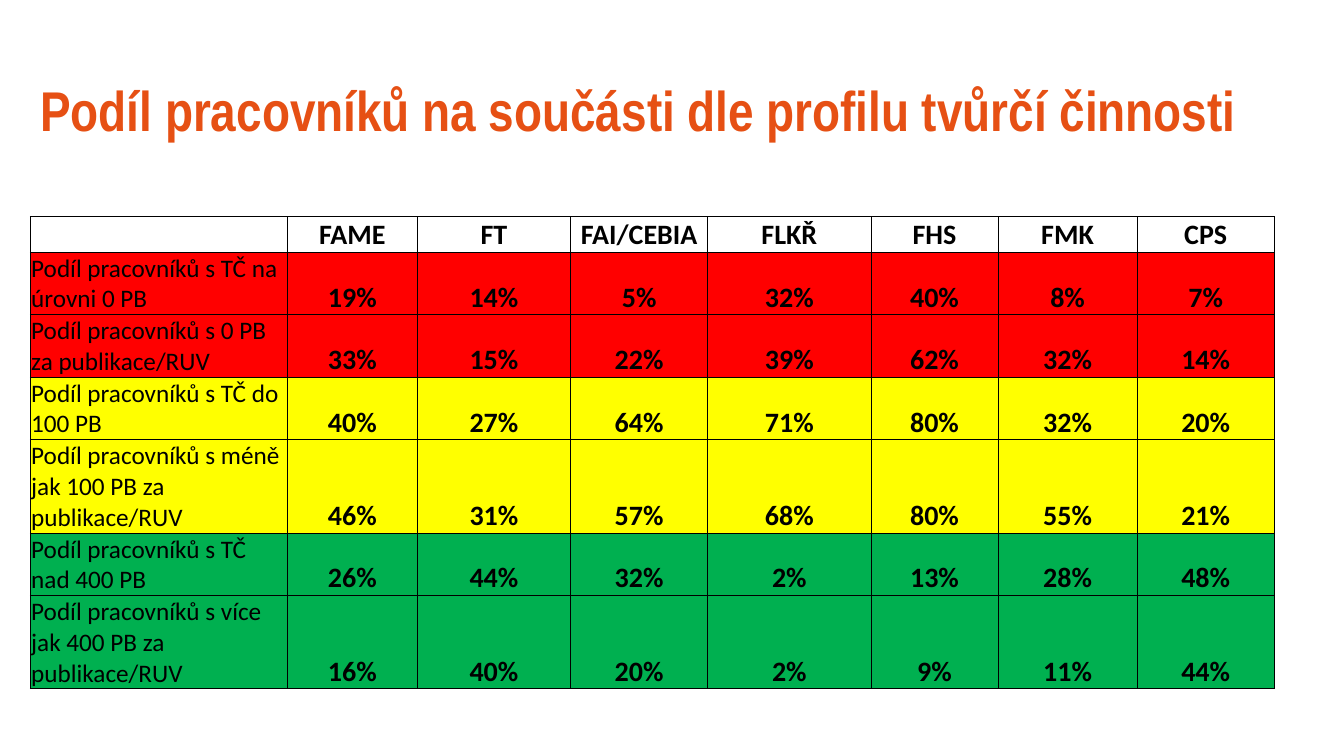
from lxml.etree import SubElement
from pptx import Presentation
from pptx.dml.color import RGBColor
from pptx.enum.text import MSO_ANCHOR as Anchor, MSO_AUTO_SIZE as AutoSize, PP_ALIGN as Align
from pptx.oxml.ns import qn
from pptx.util import Inches, Pt

ORANGE = RGBColor(0xE6, 0x50, 0x14)
BLACK = RGBColor(0x00, 0x00, 0x00)
RED = RGBColor(0xFF, 0x00, 0x00)
YELLOW = RGBColor(0xFF, 0xFF, 0x00)
GREEN = RGBColor(0x00, 0xB0, 0x50)

TITLE = "Podíl pracovníků na součásti dle profilu tvůrčí činnosti"
FACULTIES = ["FAME", "FT", "FAI/CEBIA", "FLKŘ", "FHS", "FMK", "CPS"]
COLUMN_WIDTHS = [2.55, 1.29, 1.52, 1.36, 1.62, 1.26, 1.38, 1.36]
HEADER_HEIGHT, TWO_LINES, THREE_LINES = 0.35, 0.62, 0.92

# Label, row height, fill, percentages by faculty
SHARES = [
    ("Podíl pracovníků s TČ na úrovni 0 PB", TWO_LINES, RED,
     [19, 14, 5, 32, 40, 8, 7]),
    ("Podíl pracovníků s 0 PB za publikace/RUV", TWO_LINES, RED,
     [33, 15, 22, 39, 62, 32, 14]),
    ("Podíl pracovníků s TČ do 100 PB", TWO_LINES, YELLOW,
     [40, 27, 64, 71, 80, 32, 20]),
    ("Podíl pracovníků s méně jak 100 PB za publikace/RUV", THREE_LINES, YELLOW,
     [46, 31, 57, 68, 80, 55, 21]),
    ("Podíl pracovníků s TČ nad 400 PB", TWO_LINES, GREEN,
     [26, 44, 32, 2, 13, 28, 48]),
    ("Podíl pracovníků s více jak 400 PB za publikace/RUV", THREE_LINES, GREEN,
     [16, 40, 20, 2, 9, 11, 44]),
]


def write_text(frame, text, *, font, size, color=BLACK, bold=False,
               align=Align.LEFT, line_spacing=None):
    paragraph = frame.paragraphs[0]
    paragraph.alignment = align
    paragraph.line_spacing = line_spacing
    if not text:
        return
    run = paragraph.add_run()
    run.text = text
    run.font.name = font
    run.font.size = Pt(size)
    run.font.bold = bold
    run.font.color.rgb = color


class SlideBuilder:
    title_font = "Arial Narrow"
    table_font = "Calibri"
    border_width = 0.5

    def __init__(self, deck):
        self.slide = deck.slides.add_slide(deck.slide_layouts[5])

    def title(self, text, left, top, width, height):
        heading = self.slide.shapes.title
        heading.left, heading.top = Inches(left), Inches(top)
        heading.width, heading.height = Inches(width), Inches(height)
        frame = heading.text_frame
        frame.word_wrap = True
        frame.auto_size = AutoSize.NONE
        frame.vertical_anchor = Anchor.MIDDLE
        write_text(frame, text, font=self.title_font, size=40, color=ORANGE,
                   bold=True, line_spacing=0.9)

    def table(self, rows, left, top, widths, heights):
        """Each row is a fill colour (or None) and its cell texts."""
        grid = self.slide.shapes.add_table(
            len(rows), len(widths), Inches(left), Inches(top),
            Inches(sum(widths)), Inches(sum(heights))).table
        grid.horz_banding = False
        grid.first_row = False
        for column, width in zip(grid.columns, widths):
            column.width = Inches(width)
        for row, height, (fill, texts) in zip(grid.rows, heights, rows):
            row.height = Inches(height)
            for index, (cell, text) in enumerate(zip(row.cells, texts)):
                self.cell(cell, text, fill, is_label=index == 0)

    def cell(self, cell, text, fill, is_label):
        cell.margin_left = cell.margin_right = cell.margin_top = Inches(0.01)
        cell.margin_bottom = 0
        cell.vertical_anchor = Anchor.BOTTOM
        self.borders(cell)
        if fill is None:
            cell.fill.background()
        else:
            cell.fill.solid()
            cell.fill.fore_color.rgb = fill
        write_text(cell.text_frame, text, font=self.table_font,
                   size=18 if is_label else 20, bold=not is_label,
                   align=Align.LEFT if is_label else Align.CENTER)

    def borders(self, cell):
        properties = cell._tc.get_or_add_tcPr()
        for side in ("a:lnL", "a:lnR", "a:lnT", "a:lnB"):
            line = SubElement(properties, qn(side), w=str(Pt(self.border_width)))
            solid = SubElement(line, qn("a:solidFill"))
            SubElement(solid, qn("a:srgbClr"), val=str(BLACK))


def main():
    deck = Presentation()
    deck.slide_width, deck.slide_height = Inches(13.33), Inches(7.5)
    builder = SlideBuilder(deck)

    # Heading
    builder.title(TITLE, 0.3, 0.4, 12.12, 1.45)

    # Shares by faculty
    rows = [(None, ["", *FACULTIES])]
    rows += [(fill, [label, *(f"{share}%" for share in shares)])
             for label, _, fill, shares in SHARES]
    heights = [HEADER_HEIGHT, *(height for _, height, _, _ in SHARES)]
    builder.table(rows, 0.3, 2.15, COLUMN_WIDTHS, heights)

    deck.save("out.pptx")


if __name__ == "__main__":
    main()
